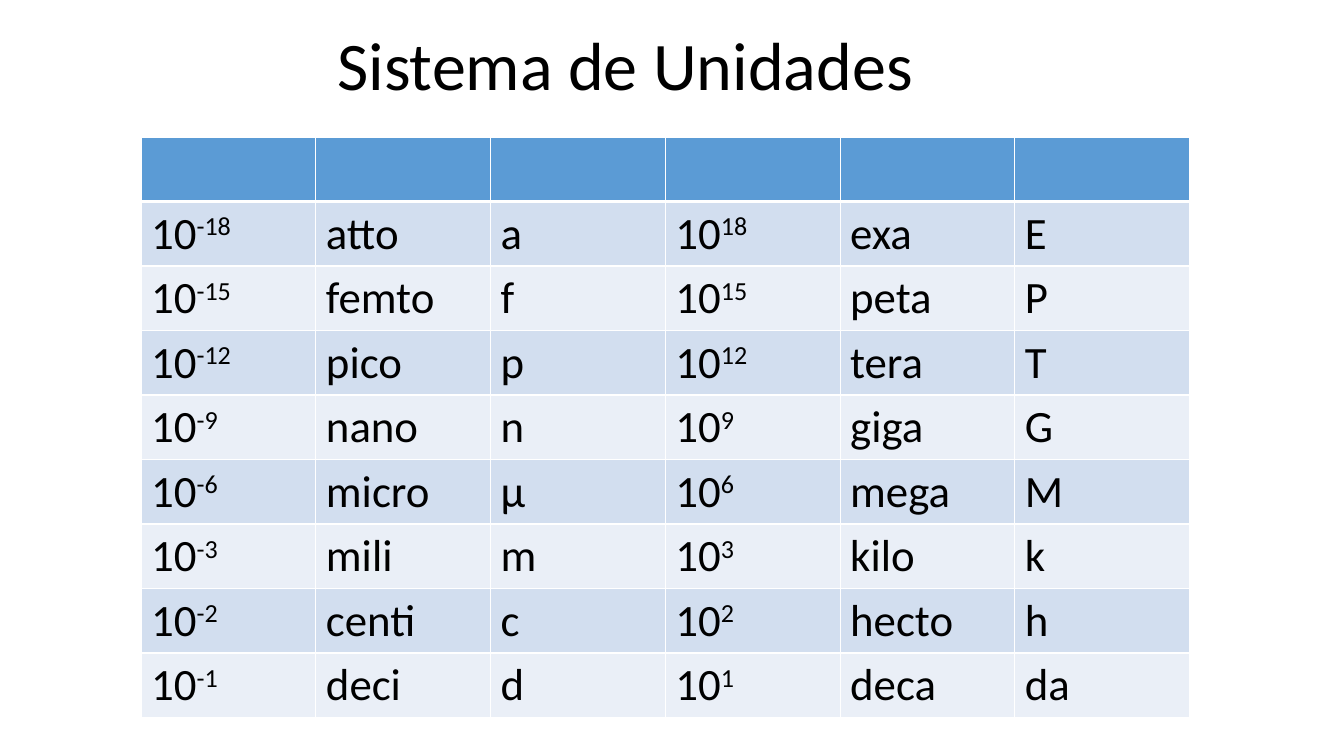
"""Build a slide with a table of metric unit prefixes."""
from lxml import etree
from pptx import Presentation
from pptx.dml.color import RGBColor
from pptx.enum import text
from pptx.oxml import ns
from pptx.util import Inches, Pt

TITLE = "Sistema de Unidades"
PREFIXES = [
    ("-18", "atto", "a", "18", "exa", "E"),
    ("-15", "femto", "f", "15", "peta", "P"),
    ("-12", "pico", "p", "12", "tera", "T"),
    ("-9", "nano", "n", "9", "giga", "G"),
    ("-6", "micro", "µ", "6", "mega", "M"),
    ("-3", "mili", "m", "3", "kilo", "k"),
    ("-2", "centi", "c", "2", "hecto", "h"),
    ("-1", "deci", "d", "1", "deca", "da"),
]
COLORS = {"text": "000000", "header": "5B9BD5", "odd": "D2DEEF",
          "even": "EAEFF7", "border": "FFFFFF"}
FONT = "Calibri"
EXPONENT_COLS = (0, 3)
COLS = len(PREFIXES[0])
ROWS = len(PREFIXES) + 1
LEFT, TOP, WIDTH, ROW_HEIGHT = 1.4, 1.36, 10.4, 0.64


def style(p, size):
    p.font.name = FONT
    p.font.size = Pt(size)
    p.font.color.rgb = RGBColor.from_string(COLORS["text"])


def add_title(slide):
    sp = slide.shapes.add_textbox(Inches(1.85), Inches(0.24), Inches(8.7), Inches(0.87))
    tf = sp.text_frame
    tf.word_wrap = True
    tf.vertical_anchor = text.MSO_ANCHOR.MIDDLE
    p = tf.paragraphs[0]
    p.text = TITLE
    p.alignment = text.PP_ALIGN.CENTER
    p.line_spacing = 0.9
    style(p, 48.6)


def set_borders(cell, top, bottom):
    tc_pr = cell._tc.get_or_add_tcPr()
    for side, width in (("L", 1), ("R", 1), ("T", top), ("B", bottom)):
        ln = etree.SubElement(tc_pr, ns.qn(f"a:ln{side}"), w=str(Pt(width)))
        fill = etree.SubElement(ln, ns.qn("a:solidFill"))
        etree.SubElement(fill, ns.qn("a:srgbClr"), val=COLORS["border"])


def fill_cell(cell, row, col):
    set_borders(cell, 3 if row == 1 else 1, 3 if row == 0 else 1)
    band = "header" if row == 0 else "odd" if row % 2 else "even"
    cell.fill.solid()
    cell.fill.fore_color.rgb = RGBColor.from_string(COLORS[band])
    p = cell.text_frame.paragraphs[0]
    style(p, 32)
    if row == 0:
        return
    value = PREFIXES[row - 1][col]
    r = p.add_run()
    if col in EXPONENT_COLS:
        r.text = "10"
        r = p.add_run()
        r._r.get_or_add_rPr().set("baseline", "30000")
    r.text = value


def add_prefix_table(slide):
    table = slide.shapes.add_table(ROWS, COLS, Inches(LEFT), Inches(TOP),
                                   Inches(WIDTH), Inches(ROW_HEIGHT * ROWS)).table
    for row in range(ROWS):
        for col in range(COLS):
            fill_cell(table.cell(row, col), row, col)


def main():
    prs = Presentation()
    prs.slide_width, prs.slide_height = Inches(13.33), Inches(7.5)
    slide = prs.slides.add_slide(prs.slide_layouts[6])
    add_title(slide)
    add_prefix_table(slide)
    prs.save("out.pptx")


if __name__ == "__main__":
    main()
